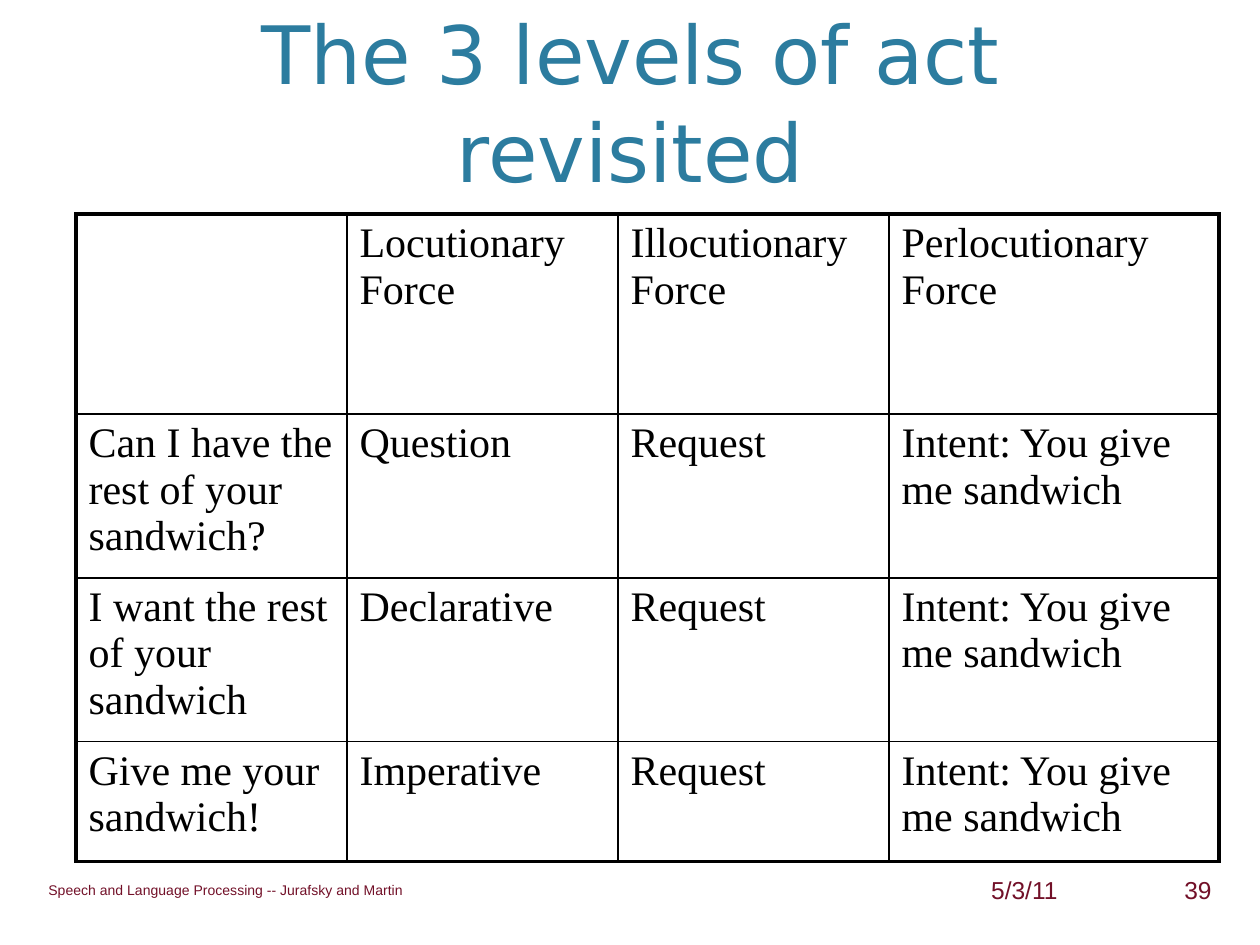
from lxml import etree
from pptx import Presentation
from pptx.dml.color import RGBColor
from pptx.enum.text import MSO_ANCHOR, PP_ALIGN
from pptx.oxml.ns import qn
from pptx.util import Emu, Pt

LEFT, MID, RIGHT = PP_ALIGN.LEFT, PP_ALIGN.CENTER, PP_ALIGN.RIGHT
CENTER, BOTTOM = MSO_ANCHOR.MIDDLE, MSO_ANCHOR.BOTTOM

COLORS = {"title": "2C7C9F", "foot": "721028", "ink": "000000", "paper": "FFFFFF"}
COLS = [271, 271, 271, 330]
ROWS = [200, 140, 140, 120]
INTENT = "Intent: You give me sandwich"
CELLS = [
    ["", "Locutionary\nForce", "Illocutionary\nForce", "Perlocutionary\nForce"],
    ["Can I have the rest of your sandwich?", "Question", "Request", INTENT],
    ["I want the rest of your sandwich", "Declarative", "Request", INTENT],
    ["Give me your sandwich!", "Imperative", "Request", INTENT],
]


def px(n):
    return Emu(round(n * 914400 / 126))


class Deck:
    def __init__(self):
        self.file = Presentation()
        self.file.slide_width, self.file.slide_height = px(1260), px(945)
        self.slide = self.file.slides.add_slide(self.file.slide_layouts[6])

    def style(self, frame, font, size, color, align=LEFT):
        for par in frame.paragraphs:
            par.alignment = align
            par.font.name, par.font.size = font, Pt(size)
            par.font.color.rgb = RGBColor.from_string(COLORS[color])

    def text(self, words, box, font, size, color, align=LEFT, anchor=CENTER):
        frame = self.slide.shapes.add_textbox(*map(px, box)).text_frame
        frame.word_wrap = True
        frame.vertical_anchor = anchor
        frame.text = words
        self.style(frame, font, size, color, align)
        return frame

    def border(self, cell, sides):
        props = cell._tc.get_or_add_tcPr()
        for at, (side, width) in enumerate(sides.items()):
            line = etree.Element(qn(f"a:ln{side}"), w=str(Pt(width)))
            fill = etree.SubElement(line, qn("a:solidFill"))
            etree.SubElement(fill, qn("a:srgbClr"), val=COLORS["ink"])
            props.insert(at, line)

    def table(self, left, top, cols, rows, cells):
        box = map(px, (left, top, sum(cols), sum(rows)))
        grid = self.slide.shapes.add_table(len(rows), len(cols), *box).table
        grid.first_row = grid.horz_banding = False
        for col, width in zip(grid.columns, cols):
            col.width = px(width)
        for row, height in zip(grid.rows, rows):
            row.height = px(height)
        for r, line in enumerate(cells):
            for c, words in enumerate(line):
                cell = grid.cell(r, c)
                cell.text = words
                cell.fill.solid()
                cell.fill.fore_color.rgb = RGBColor.from_string(COLORS["paper"])
                self.style(cell.text_frame, "Times New Roman", 24, "ink")
                edges = {"L": c == 0, "R": c == len(cols) - 1,
                         "T": r == 0, "B": r == len(rows) - 1}
                self.border(cell, {k: 2.25 if v else 1 for k, v in edges.items()})


def main():
    deck = Deck()
    title = deck.text("The 3 levels of act revisited", (76, 15, 1109, 184),
                      "DejaVu Sans", 46, "title", MID, BOTTOM)
    title.margin_top = title.margin_bottom = 0
    title.paragraphs[0].line_spacing = Pt(56)
    deck.table(76, 214, COLS, ROWS, CELLS)
    for words, left, width, size, align in [
        ("5/3/11", 776, 294, 14, RIGHT),
        ("39", 1088, 136, 14, RIGHT),
        ("Speech and Language Processing -- Jurafsky and Martin", 36, 667, 8, LEFT),
    ]:
        deck.text(words, (left, 865, width, 50), "Arial", size, "foot", align)
    deck.file.save("out.pptx")


if __name__ == "__main__":
    main()
